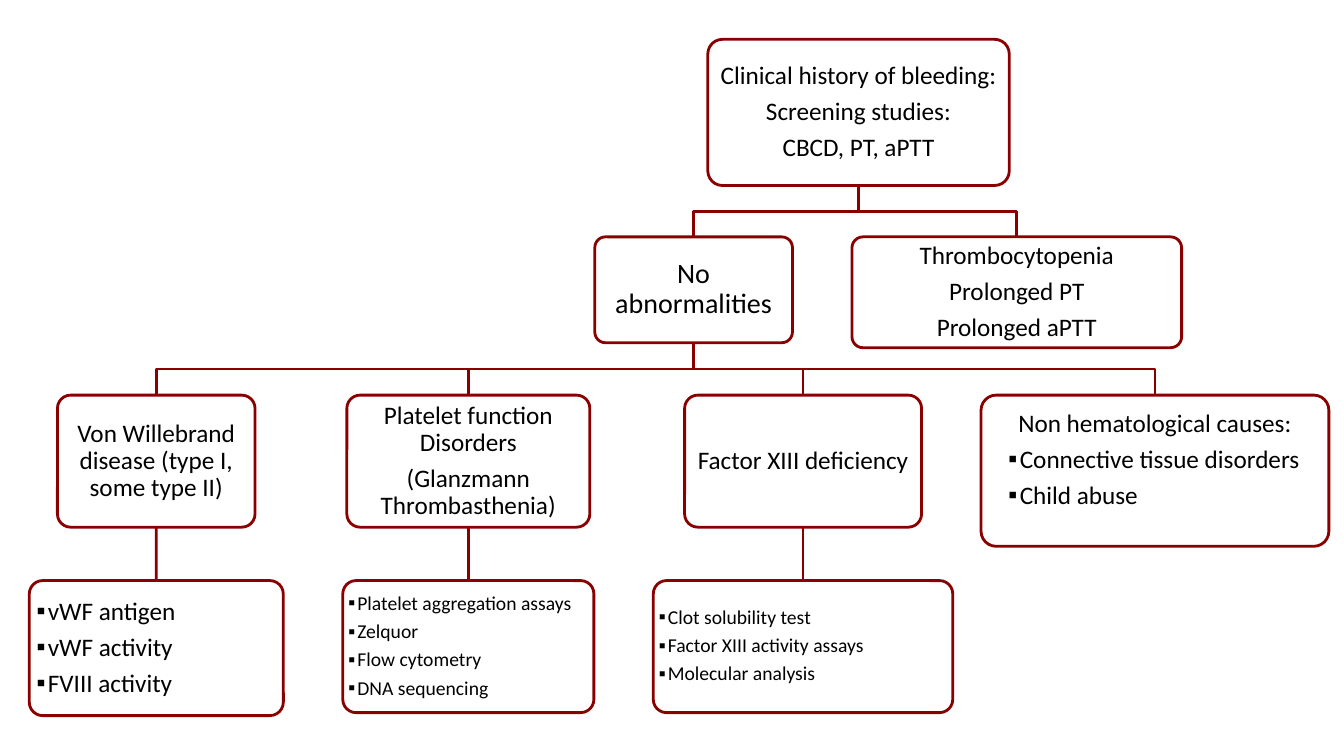
from dataclasses import dataclass

from lxml import etree
from pptx import Presentation
from pptx.dml.color import RGBColor
from pptx.enum.shapes import MSO_CONNECTOR, MSO_SHAPE
from pptx.enum.text import MSO_ANCHOR, PP_ALIGN
from pptx.oxml.ns import qn
from pptx.util import Inches, Pt

ROUNDED = MSO_SHAPE.ROUNDED_RECTANGLE
STRAIGHT = MSO_CONNECTOR.STRAIGHT
MIDDLE = MSO_ANCHOR.MIDDLE
LEFT, CENTER = PP_ALIGN.LEFT, PP_ALIGN.CENTER
TOP_SITE, BOTTOM_SITE = 0, 2
BLANK_LAYOUT = 6


@dataclass(frozen=True)
class Theme:
    font: str = "Calibri"
    text: RGBColor = RGBColor(0x00, 0x00, 0x00)
    line: RGBColor = RGBColor(0x8A, 0x00, 0x00)
    line_width: float = 2
    large: int = 20
    normal: int = 18
    small: int = 14
    corner: float = 0.1
    line_spacing: float = 0.9


THEME = Theme()


@dataclass(frozen=True)
class Node:
    """A box of the tree: place in inches, headings, then bulleted items."""
    place: tuple
    headings: tuple = ()
    items: tuple = ()
    size: int = THEME.normal
    item_margin: float = 0
    bottom_space: float = 0


# Content of the decision tree
HISTORY = Node((7.02, 0.39, 2.99, 1.45),
               ("Clinical history of bleeding:", "Screening studies:", "CBCD, PT, aPTT"))
NORMAL = Node((5.9, 2.35, 1.96, 1.05), ("No abnormalities",), size=THEME.large)
ABNORMAL = Node((8.45, 2.35, 3.27, 1.1),
                ("Thrombocytopenia", "Prolonged PT", "Prolonged aPTT"))
NON_HEMATOLOGICAL = Node((9.73, 3.92, 3.45, 1.5), ("Non hematological causes:",),
                         ("Connective tissue disorders", "Child abuse"),
                         item_margin=0.2, bottom_space=0.2)

# Each disorder with the tests that confirm it
DISORDERS = (
    (Node((0.57, 3.92, 1.96, 1.31), ("Von Willebrand disease (type I, some type II)",)),
     Node((0.29, 5.76, 2.52, 1.34),
          items=("vWF antigen", "vWF activity", "FVIII activity"))),
    (Node((3.44, 3.92, 2.41, 1.31),
          ("Platelet function Disorders", "(Glanzmann Thrombasthenia)")),
     Node((3.4, 5.76, 2.49, 1.31), size=THEME.small,
          items=("Platelet aggregation assays", "Zelquor", "Flow cytometry",
                 "DNA sequencing"))),
    (Node((6.79, 3.92, 2.35, 1.31), ("Factor XIII deficiency",)),
     Node((6.48, 5.76, 2.97, 1.31), size=THEME.small,
          items=("Clot solubility test", "Factor XIII activity assays",
                 "Molecular analysis"))),
)


def style_line(line):
    line.color.rgb = THEME.line
    line.width = Pt(THEME.line_width)


def add_bullet(para, size, margin):
    """Give the paragraph a square bullet with a hanging indent."""
    hanging = Inches(size / 160)
    properties = para._p.get_or_add_pPr()
    properties.set("marL", str(Inches(margin) + hanging))
    properties.set("indent", str(-hanging))
    etree.SubElement(properties, qn("a:buFont")).set("typeface", THEME.font)
    etree.SubElement(properties, qn("a:buChar")).set("char", "▪")


def format_paragraph(para, size, is_first):
    para.alignment = CENTER
    para.line_spacing = THEME.line_spacing
    para.space_before = Pt(0 if is_first else 0.35 * size)
    for span in para.runs:
        span.font.name = THEME.font
        span.font.size = Pt(size)
        span.font.color.rgb = THEME.text


def add_box(page, node):
    box = page.shapes.add_shape(ROUNDED, *map(Inches, node.place))
    box.adjustments[0] = THEME.corner
    box.shadow.inherit = False
    box.fill.background()
    style_line(box.line)

    # The rounded corners already hold the text in by 0.29 of their radius
    frame = box.text_frame
    inset = Inches(node.size / 250 - 0.29 * THEME.corner * min(node.place[2:]))
    frame.margin_left = frame.margin_right = frame.margin_top = inset
    frame.margin_bottom = inset + Inches(node.bottom_space)
    frame.vertical_anchor = MIDDLE
    frame.word_wrap = True

    frame.text = "\n".join(node.headings + node.items)
    for index, para in enumerate(frame.paragraphs):
        format_paragraph(para, node.size, index == 0)
        if index >= len(node.headings):
            para.alignment = LEFT
            add_bullet(para, node.size, node.item_margin)
    return box


def add_branch(page, parent, child):
    """Draw a bent line from the parent's bottom to the child's top."""
    start_x = parent.left + parent.width // 2
    start_y = parent.top + parent.height
    end_x = child.left + child.width // 2
    middle_y = (start_y + child.top) // 2
    builder = page.shapes.build_freeform(start_x, start_y)
    builder.add_line_segments(
        [(start_x, middle_y), (end_x, middle_y), (end_x, child.top)], close=False)
    branch = builder.convert_to_shape()
    branch.shadow.inherit = False
    branch.fill.background()
    style_line(branch.line)


def add_link(page, parent, child):
    """Draw a straight connector attached to both boxes."""
    link = page.shapes.add_connector(STRAIGHT, 0, 0, 0, 0)
    link.begin_connect(parent, BOTTOM_SITE)
    link.end_connect(child, TOP_SITE)
    style_line(link.line)
    etree.SubElement(link._element.spPr, qn("a:effectLst"))


def main():
    deck = Presentation()
    deck.slide_width, deck.slide_height = Inches(13.33), Inches(7.5)
    page = deck.slides.add_slide(deck.slide_layouts[BLANK_LAYOUT])

    # History and the results of screening
    history, normal, abnormal = (
        add_box(page, node) for node in (HISTORY, NORMAL, ABNORMAL))
    add_branch(page, history, normal)
    add_branch(page, history, abnormal)

    # Causes to consider when screening is normal
    for disorder_node, tests_node in DISORDERS:
        disorder = add_box(page, disorder_node)
        add_branch(page, normal, disorder)
        add_link(page, disorder, add_box(page, tests_node))
    add_branch(page, normal, add_box(page, NON_HEMATOLOGICAL))

    deck.save("out.pptx")


if __name__ == "__main__":
    main()
